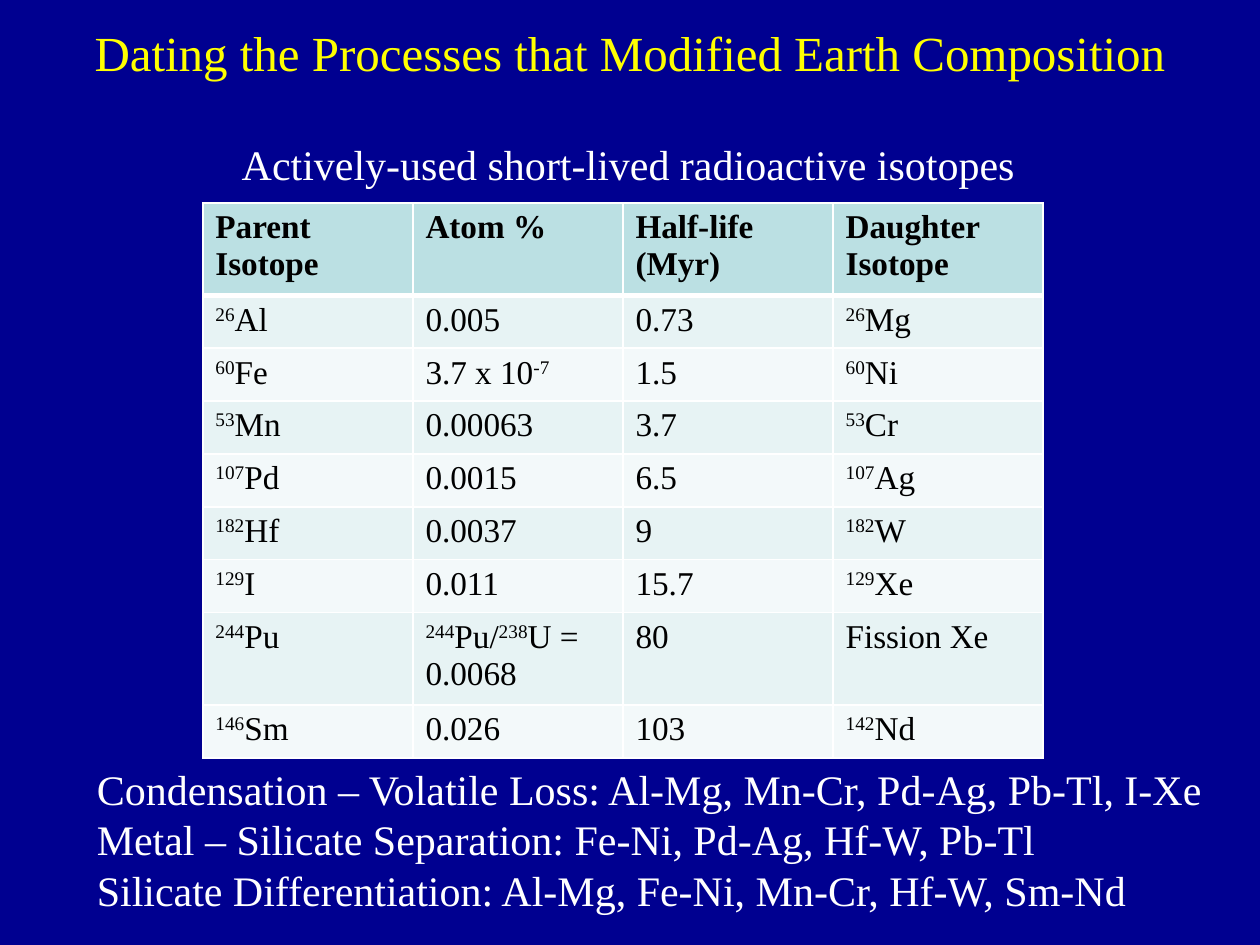
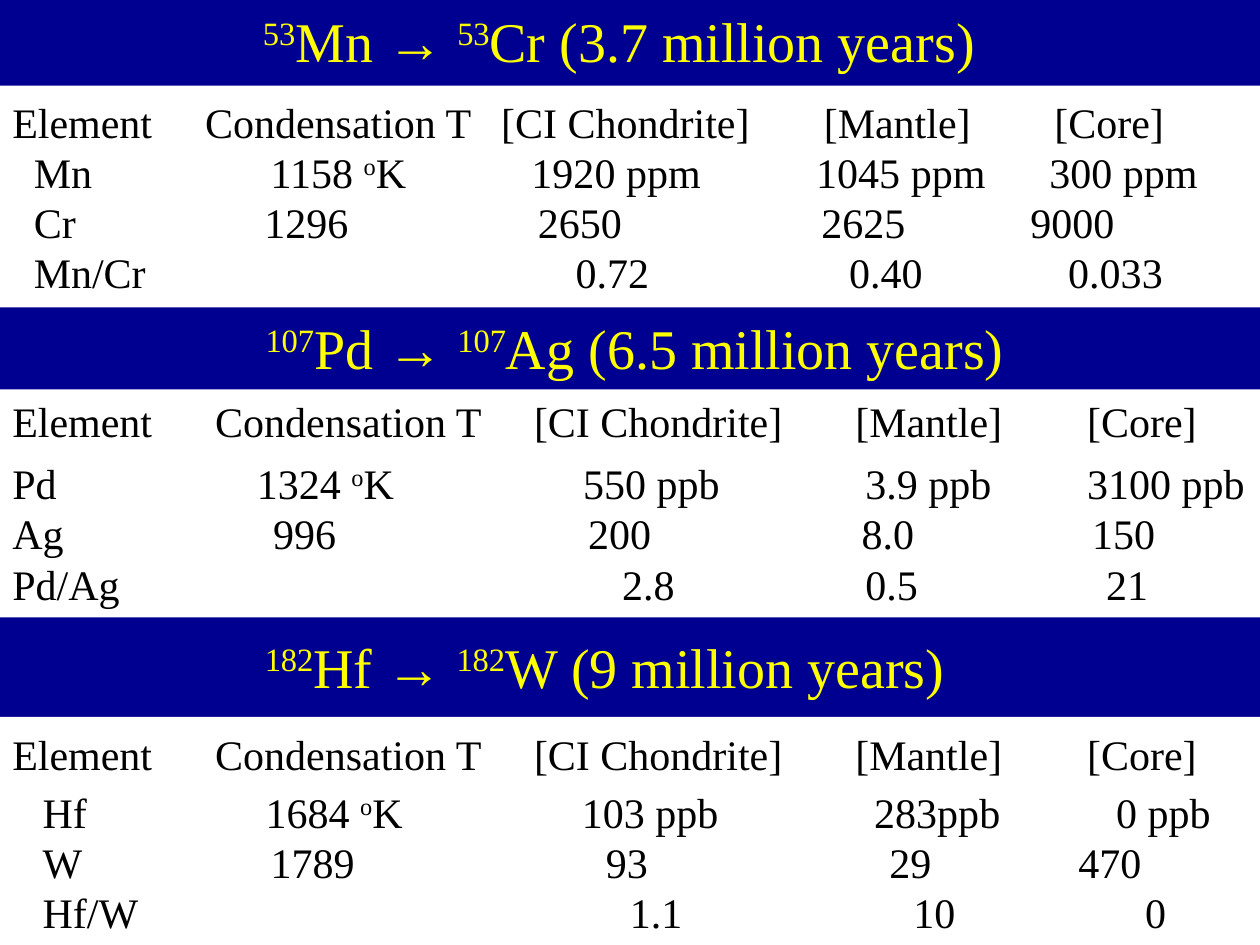
import pptx
import pptx.dml.color
import pptx.enum.shapes
import pptx.enum.text
import pptx.oxml.ns
import pptx.util
from lxml import etree

Inches = pptx.util.Inches
Align = pptx.enum.text.PP_ALIGN
Anchor = pptx.enum.text.MSO_ANCHOR

FONT = "Times New Roman"
NAVY, YELLOW, WHITE, BLACK = "000090", "FFFF00", "FFFFFF", "000000"
HEADER_FILL, BAND_FILLS = "BBE0E3", ("E7F3F4", "F3F9FA")
INSET = 0.1

ISOTOPE_ROWS = [
    ("Parent Isotope", "Atom %", "Half-life (Myr)", "Daughter Isotope"),
    ("^26^Al", "0.005", "0.73", "^26^Mg"),
    ("^60^Fe", "3.7 x 10^-7^", "1.5", "^60^Ni"),
    ("^53^Mn", "0.00063", "3.7", "^53^Cr"),
    ("^107^Pd", "0.0015", "6.5", "^107^Ag"),
    ("^182^Hf", "0.0037", "9", "^182^W"),
    ("^129^I", "0.011", "15.7", "^129^Xe"),
    ("^244^Pu", "^244^Pu/^238^U = 0.0068", "80", "Fission Xe"),
    ("^146^Sm", "0.026", "103", "^142^Nd"),
]
TALL_ROWS = (0, 7)

PROCESSES = [
    "Condensation – Volatile Loss: Al-Mg, Mn-Cr, Pd-Ag, Pb-Tl, I-Xe",
    "Metal – Silicate Separation: Fe-Ni, Pd-Ag, Hf-W, Pb-Tl",
    "Silicate Differentiation: Al-Mg, Fe-Ni, Mn-Cr, Hf-W, Sm-Nd",
]

COLUMN_HEADS = "Element\tCondensation T\t[CI Chondrite]\t[Mantle]\t[Core]"
WIDE_STOPS = (1.71, 4.24, 6.79, 8.63)

DECAY_SYSTEMS = [
    {
        "heading": "^53^Mn → ^53^Cr (3.7 million years)",
        "heading_box": (1.86, 0, 6.11, 0.64),
        "panel": (0, 0.68, 10, 1.76),
        "heads_top": 0.72,
        "head_stops": (1.63, 3.98, 6.54, 8.37),
        "rows_at": (0.17, 1.11),
        "rows": [
            ("Mn\t1158 ^o^K\t1920 ppm\t1045 ppm\t300 ppm", (2.15, 4.22, 6.48, 8.33)),
            ("Cr\t1296\t2650\t2625\t9000", (2.1, 4.27, 6.52, 8.18)),
            ("Mn/Cr\t0.72\t0.40\t0.033", (4.57, 6.74, 8.48)),
        ],
    },
    {
        "heading": "^107^Pd → ^107^Ag (6.5 million years)",
        "heading_box": (1.86, 2.44, 6.36, 0.64),
        "panel": (0, 3.09, 10, 1.81),
        "heads_top": 3.09,
        "head_stops": WIDE_STOPS,
        "rows_at": (0, 3.58),
        "rows": [
            ("Pd\t1324 ^o^K\t550 ppb\t3.9 ppb\t3100 ppb", (2.04, 4.63, 6.87, 8.63)),
            ("Ag\t996\t200\t8.0\t150", (2.17, 4.67, 6.84, 8.67)),
            ("Pd/Ag\t2.8\t0.5\t21", (4.94, 6.87, 8.78)),
        ],
    },
    {
        "heading": "^182^Hf → ^182^W (9 million years)",
        "heading_box": (1.86, 4.97, 5.88, 0.64),
        "panel": (0, 5.69, 10, 1.81),
        "heads_top": 5.73,
        "head_stops": WIDE_STOPS,
        "rows_at": (0.24, 6.19),
        "rows": [
            ("Hf\t1684 ^o^K\t103 ppb\t283ppb\t0 ppb", (2.11, 4.62, 6.94, 8.86)),
            ("W\t1789\t93\t29\t470", (2.15, 4.81, 7.06, 8.56)),
            ("Hf/W\t1.1\t10\t0", (5, 7.25, 9.09)),
        ],
    },
]


def rgb(hex_color):
    return pptx.dml.color.RGBColor.from_string(hex_color)


def fill_solid(fill, color):
    fill.solid()
    fill.fore_color.rgb = rgb(color)


def child(parent, tag, **attributes):
    return etree.SubElement(parent, pptx.oxml.ns.qn(tag), **attributes)


def write_paragraph(paragraph, text, size, color, bold=False):
    for index, part in enumerate(text.split("^")):
        if not part:
            continue
        run = paragraph.add_run()
        run.text = part
        run.font.name = FONT
        run.font.size = pptx.util.Pt(size)
        run.font.bold = bold
        run.font.color.rgb = rgb(color)
        if index % 2:
            run.font._element.set("baseline", "30000")


def set_tab_stops(paragraph, stops, text_left):
    tab_list = child(paragraph._p.get_or_add_pPr(), "a:tabLst")
    for stop in stops:
        child(tab_list, "a:tab", pos=str(int(Inches(stop - text_left))), algn="l")


def place(shape, box):
    shape.left, shape.top, shape.width, shape.height = map(Inches, box)


def add_title(slide, text, box, size):
    title = slide.shapes.title
    place(title, box)
    frame = title.text_frame
    frame.word_wrap = True
    frame.auto_size = pptx.enum.text.MSO_AUTO_SIZE.NONE
    frame.vertical_anchor = Anchor.MIDDLE
    frame.paragraphs[0].alignment = Align.CENTER
    write_paragraph(frame.paragraphs[0], text, size, YELLOW)


def add_text(slide, lines, box, size, color, alignment=Align.LEFT):
    frame = slide.shapes.add_textbox(*map(Inches, box)).text_frame
    frame.word_wrap = True
    frame.margin_right = 0 if alignment == Align.LEFT else Inches(INSET)
    for index, line in enumerate(lines):
        paragraph = frame.add_paragraph() if index else frame.paragraphs[0]
        paragraph.alignment = alignment
        write_paragraph(paragraph, line, size, color)
    return frame


def add_tabbed_rows(slide, rows, box):
    frame = add_text(slide, [text for text, _ in rows], box, 24, BLACK)
    for paragraph, (_, stops) in zip(frame.paragraphs, rows):
        set_tab_stops(paragraph, stops, box[0] + INSET)


def add_panel(slide, box):
    rectangle = pptx.enum.shapes.MSO_SHAPE.RECTANGLE
    panel = slide.shapes.add_shape(rectangle, *map(Inches, box))
    panel.shadow.inherit = False
    fill_solid(panel.fill, WHITE)
    panel.line.fill.background()


def set_borders(cell, top, bottom):
    properties = cell._tc.get_or_add_tcPr()
    widths = {"a:lnL": 1, "a:lnR": 1, "a:lnT": top, "a:lnB": bottom}
    for index, (tag, width) in enumerate(widths.items()):
        line = child(properties, tag, w=str(int(pptx.util.Pt(width))))
        child(child(line, "a:solidFill"), "a:srgbClr", val=WHITE)
        properties.insert(index, line)


def add_isotope_table(slide, rows, left, top):
    heights = [0.73 if index in TALL_ROWS else 0.42 for index in range(len(rows))]
    box = (left, top, 6.67, sum(heights))
    table = slide.shapes.add_table(len(rows), len(rows[0]), *map(Inches, box)).table
    table.horz_banding = False
    for row_index, values in enumerate(rows):
        table.rows[row_index].height = Inches(heights[row_index])
        header = row_index == 0
        fill = HEADER_FILL if header else BAND_FILLS[(row_index - 1) % 2]
        for column_index, value in enumerate(values):
            cell = table.cell(row_index, column_index)
            fill_solid(cell.fill, fill)
            set_borders(cell, 3 if row_index == 1 else 1, 3 if header else 1)
            write_paragraph(cell.text_frame.paragraphs[0], value, 19, BLACK, header)


def add_decay_system(slide, system, is_title):
    add_panel(slide, system["panel"])
    if is_title:
        add_title(slide, system["heading"], system["heading_box"], 32)
    else:
        add_text(slide, [system["heading"]], system["heading_box"], 32, YELLOW, Align.CENTER)
    heads = [(COLUMN_HEADS, system["head_stops"])]
    add_tabbed_rows(slide, heads, (0, system["heads_top"], 10, 0.5))
    left, top = system["rows_at"]
    add_tabbed_rows(slide, system["rows"], (left, top, 10 - left, 1.31))


def build_isotope_slide(slide):
    add_title(slide, "Dating the Processes that Modified Earth Composition", (0, 0, 10, 0.83), 28)
    add_text(slide, PROCESSES, (0.67, 6.01, 9.06, 1.31), 24, WHITE)
    add_text(slide, ["Actively-used short-lived radioactive isotopes"], (1.82, 1.05, 6.4, 0.51), 24, WHITE)
    add_isotope_table(slide, ISOTOPE_ROWS, 1.61, 1.61)


def build_decay_slide(slide):
    for index, system in enumerate(DECAY_SYSTEMS):
        add_decay_system(slide, system, is_title=index == 0)


def main():
    presentation = pptx.Presentation()
    presentation.slide_width = Inches(10)
    presentation.slide_height = Inches(7.5)
    fill_solid(presentation.slide_master.background.fill, NAVY)
    title_only = presentation.slide_layouts[5]
    for build in (build_isotope_slide, build_decay_slide):
        build(presentation.slides.add_slide(title_only))
    presentation.save("out.pptx")


if __name__ == "__main__":
    main()
